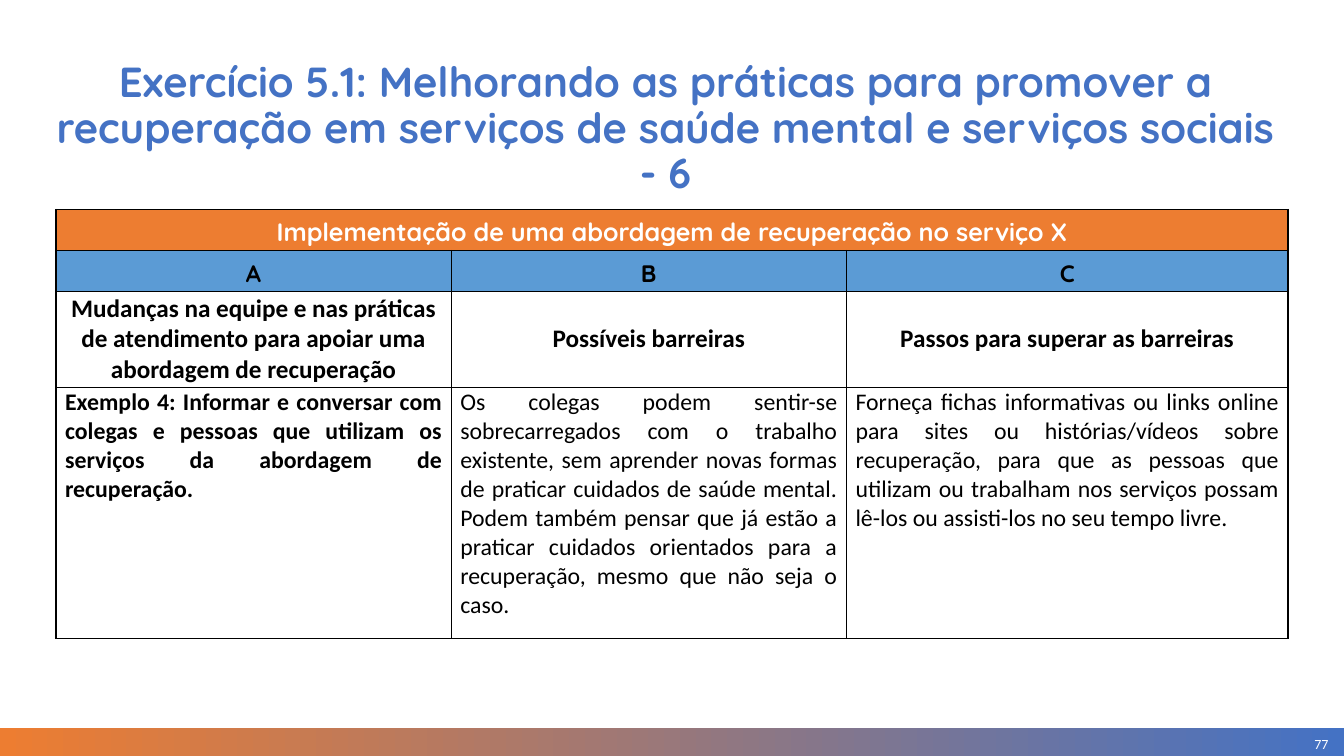
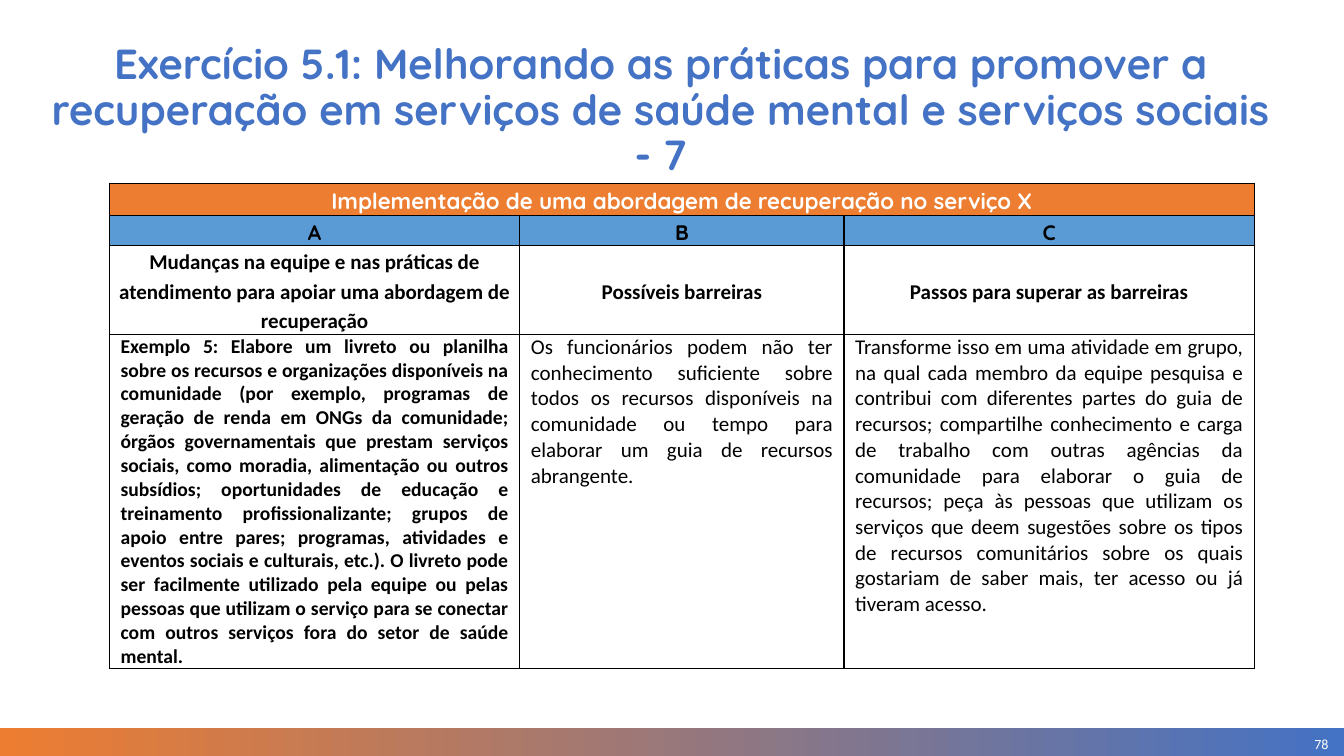
from copy import deepcopy

from lxml import etree
from pptx import Presentation
from pptx.dml.color import RGBColor
from pptx.enum.shapes import MSO_SHAPE, PP_PLACEHOLDER
from pptx.enum.text import MSO_ANCHOR, MSO_AUTO_SIZE, PP_ALIGN
from pptx.oxml.ns import qn
from pptx.util import Cm, Pt

CENTER, RIGHT, JUSTIFY = PP_ALIGN.CENTER, PP_ALIGN.RIGHT, PP_ALIGN.JUSTIFY
TOP, MIDDLE = MSO_ANCHOR.TOP, MSO_ANCHOR.MIDDLE
NO_AUTOFIT = MSO_AUTO_SIZE.NONE
RECTANGLE = MSO_SHAPE.RECTANGLE
SLIDE_NUMBER = PP_PLACEHOLDER.SLIDE_NUMBER

ORANGE = RGBColor(0xED, 0x7D, 0x31)
BLUE = RGBColor(0x44, 0x72, 0xC4)
LIGHT_BLUE = RGBColor(0x5B, 0x9B, 0xD5)
WHITE = RGBColor(0xFF, 0xFF, 0xFF)
BLACK = RGBColor(0x00, 0x00, 0x00)
HEADING_FONT, BODY_FONT = "Quicksand", "Calibri"

SLIDE_WIDTH, SLIDE_HEIGHT = Cm(33.87), Cm(19.05)
BAND_TOP = Cm(18.34)

TITLE = ("Exercício 5.1: Melhorando as práticas para promover a recuperação "
         "em serviços de saúde mental e serviços sociais - {}")
HEADER_ROWS = [
    ["Implementação de uma abordagem de recuperação no serviço X", "", ""],
    ["A", "B", "C"],
    ["Mudanças na equipe e nas práticas de atendimento para apoiar uma abordagem de recuperação",
     "Possíveis barreiras", "Passos para superar as barreiras"],
]
ROW_STYLES = [
    {"font": HEADING_FONT, "color": WHITE, "fill": ORANGE, "align": CENTER, "anchor": MIDDLE},
    {"font": HEADING_FONT, "color": BLACK, "fill": LIGHT_BLUE, "align": CENTER, "anchor": MIDDLE},
    {"font": BODY_FONT, "color": BLACK, "fill": None, "align": CENTER, "anchor": MIDDLE},
    {"font": BODY_FONT, "color": BLACK, "fill": None, "align": JUSTIFY, "anchor": TOP},
]
EXERCISES = [
    {
        "part": 6, "page": 77, "title_at": (1.09, 1.42), "table_at": (1.41, 5.28),
        "columns": [9.96, 9.96, 11.13], "rows": [1.03, 1.03, 2.42, 6.33],
        "sizes": [18, 17, 18, 17], "example_size": 17,
        "spacing": [1.15, 1.15, 1, 1], "margins": [0.23, 0.23, 0.23, 0.23],
        "example": [
            "Exemplo 4: Informar e conversar com colegas e pessoas que utilizam os "
            "serviços da abordagem de recuperação.",
            "Os colegas podem sentir-se sobrecarregados com o trabalho existente, sem "
            "aprender novas formas de praticar cuidados de saúde mental. Podem também "
            "pensar que já estão a praticar cuidados orientados para a recuperação, "
            "mesmo que não seja o caso.",
            "Forneça fichas informativas ou links online para sites ou histórias/vídeos "
            "sobre recuperação, para que as pessoas que utilizam ou trabalham nos "
            "serviços possam lê-los ou assisti-los no seu tempo livre.",
        ],
    },
    {
        "part": 7, "page": 78, "title_at": (0.97, 0.97), "table_at": (2.76, 4.62),
        "columns": [10.34, 8.17, 10.34], "rows": [0.81, 0.76, 2.24, 8.4],
        "sizes": [16, 15, 15, 15], "example_size": 14,
        "spacing": [1.15, 1.15, 1.15, 1], "margins": [0.28, 0.28, 0.23, 0.28],
        "example": [
            "Exemplo 5: Elabore um livreto ou planilha sobre os recursos e organizações "
            "disponíveis na comunidade (por exemplo, programas de geração de renda em "
            "ONGs da comunidade; órgãos governamentais que prestam serviços sociais, "
            "como moradia, alimentação ou outros subsídios; oportunidades de educação e "
            "treinamento profissionalizante; grupos de apoio entre pares; programas, "
            "atividades e eventos sociais e culturais, etc.). O livreto pode ser "
            "facilmente utilizado pela equipe ou pelas pessoas que utilizam o serviço "
            "para se conectar com outros serviços fora do setor de saúde mental.",
            "Os funcionários podem não ter conhecimento suficiente sobre todos os "
            "recursos disponíveis na comunidade ou tempo para elaborar um guia de "
            "recursos abrangente.",
            "Transforme isso em uma atividade em grupo, na qual cada membro da equipe "
            "pesquisa e contribui com diferentes partes do guia de recursos; compartilhe "
            "conhecimento e carga de trabalho com outras agências da comunidade para "
            "elaborar o guia de recursos; peça às pessoas que utilizam os serviços que "
            "deem sugestões sobre os tipos de recursos comunitários sobre os quais "
            "gostariam de saber mais, ter acesso ou já tiveram acesso.",
        ],
    },
]


def format_paragraph(paragraph, font, size, color, bold, align, spacing=1):
    paragraph.alignment = align
    paragraph.line_spacing = spacing
    paragraph.font.name = font
    paragraph.font.size = Pt(size)
    paragraph.font.color.rgb = color
    paragraph.font.bold = bold


def place(shape, left, top, width, height):
    shape.left, shape.top, shape.width, shape.height = left, top, width, height


def prepare_page_number(layout):
    number = next(p for p in layout.placeholders
                  if p.placeholder_format.type == SLIDE_NUMBER)
    place(number, Cm(28.91), Cm(18.44), Cm(4.57), Cm(0.61))
    frame = number.text_frame
    frame.margin_left = frame.margin_right = frame.margin_top = frame.margin_bottom = 0
    frame.vertical_anchor = MIDDLE
    return number


def add_band_to_layout(slide, layout):
    band = slide.shapes.add_shape(RECTANGLE, 0, BAND_TOP, SLIDE_WIDTH, SLIDE_HEIGHT - BAND_TOP)
    band.shadow.inherit = False
    band.line.fill.background()
    band.fill.gradient()
    band.fill.gradient_angle = 0
    for stop, color in zip(band.fill.gradient_stops, (ORANGE, BLUE)):
        stop.color.rgb = color
    layout.shapes.element.insert(2, band.element)


def add_title(slide, exercise):
    title = slide.shapes.title
    left, top = exercise["title_at"]
    place(title, Cm(left), Cm(top), Cm(31.37), Cm(3.6))
    frame = title.text_frame
    frame.text = TITLE.format(exercise["part"])
    frame.word_wrap = True
    frame.auto_size = NO_AUTOFIT
    frame.vertical_anchor = TOP
    format_paragraph(frame.paragraphs[0], HEADING_FONT, 30, BLUE, True, CENTER, 0.9)


def add_page_number(slide, layout_number, page):
    slide.shapes.element.append(deepcopy(layout_number.element))
    frame = slide.placeholders[layout_number.placeholder_format.idx].text_frame
    frame.text = str(page)
    format_paragraph(frame.paragraphs[0], BODY_FONT, 10, WHITE, False, RIGHT)


def add_borders(cell):
    properties = cell._tc.get_or_add_tcPr()
    for side in ("lnL", "lnR", "lnT", "lnB"):
        line = etree.SubElement(properties, qn("a:" + side), w=str(Pt(1)))
        fill = etree.SubElement(line, qn("a:solidFill"))
        etree.SubElement(fill, qn("a:srgbClr"), val=str(BLACK))


def add_plan_table(slide, exercise):
    columns, heights = exercise["columns"], exercise["rows"]
    left, top = exercise["table_at"]
    table = slide.shapes.add_table(len(heights), len(columns), Cm(left), Cm(top),
                                   Cm(sum(columns)), Cm(sum(heights))).table
    table.first_row = table.horz_banding = False
    for column, width in zip(table.columns, columns):
        column.width = Cm(width)
    for row, height in zip(table.rows, heights):
        row.height = Cm(height)
    table.cell(0, 0).merge(table.cell(0, len(columns) - 1))

    texts = HEADER_ROWS + [exercise["example"]]
    for r, (row_texts, style) in enumerate(zip(texts, ROW_STYLES)):
        is_example = r == len(HEADER_ROWS)
        for c, text in enumerate(row_texts):
            cell = table.cell(r, c)
            add_borders(cell)
            if style["fill"] is None:
                cell.fill.background()
            else:
                cell.fill.solid()
                cell.fill.fore_color.rgb = style["fill"]
            cell.margin_left = cell.margin_right = Cm(exercise["margins"][r])
            cell.margin_top = cell.margin_bottom = 0
            cell.vertical_anchor = style["anchor"]
            if cell.is_spanned:
                continue
            cell.text = text
            leads_example = is_example and c == 0
            size = exercise["example_size"] if leads_example else exercise["sizes"][r]
            format_paragraph(cell.text_frame.paragraphs[0], style["font"], size,
                             style["color"], leads_example or not is_example,
                             style["align"], exercise["spacing"][r])


def main():
    prs = Presentation()
    prs.slide_width, prs.slide_height = SLIDE_WIDTH, SLIDE_HEIGHT
    layout = prs.slide_layouts[5]
    layout_number = prepare_page_number(layout)
    for exercise in EXERCISES:
        slide = prs.slides.add_slide(layout)
        add_title(slide, exercise)
        add_plan_table(slide, exercise)
        add_page_number(slide, layout_number, exercise["page"])
    add_band_to_layout(slide, layout)
    prs.save("out.pptx")


if __name__ == "__main__":
    main()
